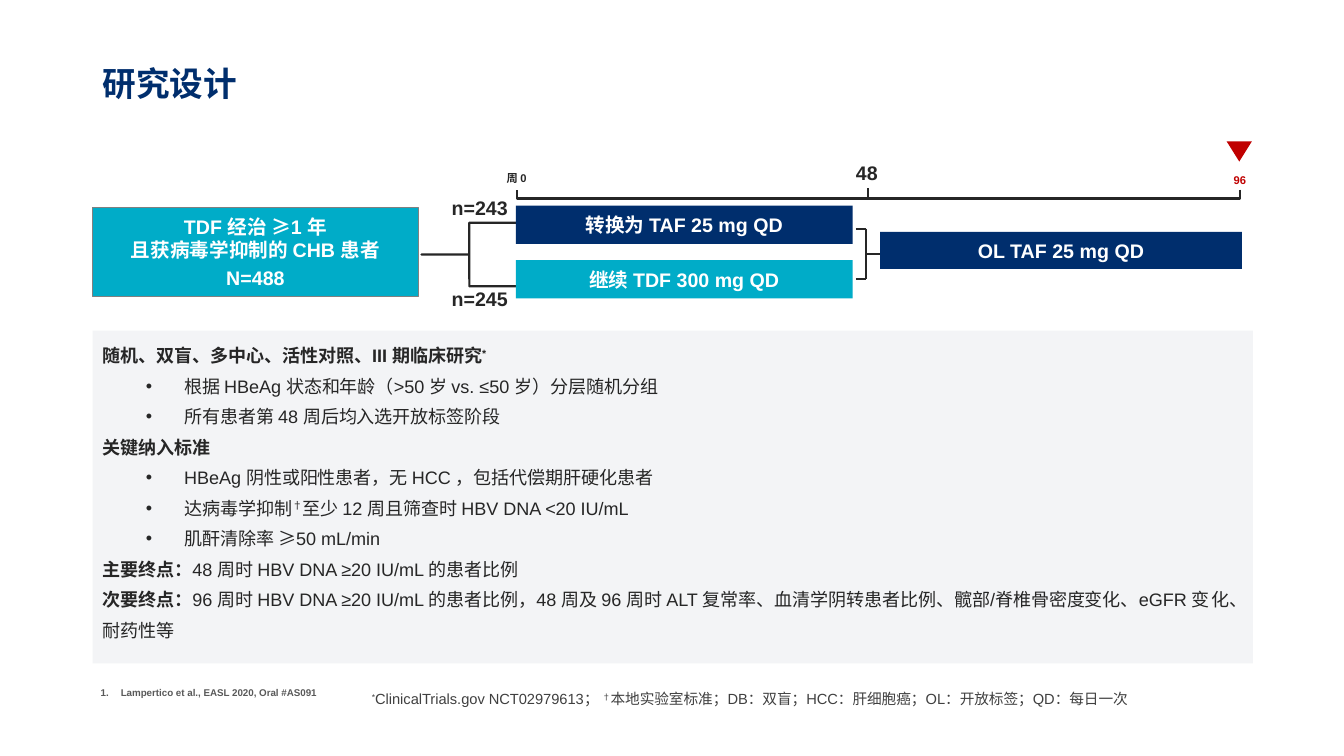
"""Builds the study design slide: treatment timeline, study arms and key criteria."""
from lxml.etree import SubElement
from pptx import Presentation
from pptx.dml.color import RGBColor
from pptx.enum.shapes import MSO_CONNECTOR as CONNECTOR, MSO_SHAPE as SHAPE
from pptx.enum.text import MSO_ANCHOR as ANCHOR, PP_ALIGN as ALIGN
from pptx.oxml.ns import qn
from pptx.util import Pt

COLORS = {"navy": "002E6D", "teal": "00ACC8", "red": "C00000", "ink": "262626", "panel": "203661",
          "white": "FFFFFF", "grey": "808080", "note": "404040", "citation": "595959"}
CJK_FONT = "Noto Sans CJK SC"


def color(name):
    return RGBColor.from_string(COLORS[name])


def add_run(paragraph, text, size, color_name, bold=False, raised=False, font="Arial"):
    run = paragraph.add_run()
    run.text = text
    run.font.size, run.font.bold = Pt(size), bold
    run.font.color.rgb = color(color_name)
    run.font.name = font
    properties = run.font._element
    SubElement(properties, qn("a:ea"), typeface=CJK_FONT)
    if raised:
        properties.set("baseline", "30000")


presentation = Presentation()
presentation.slide_width, presentation.slide_height = Pt(960), Pt(540)
slide = presentation.slides.add_slide(presentation.slide_layouts[6])
shapes = slide.shapes

title = shapes.add_textbox(Pt(66.2), Pt(29.5), Pt(828), Pt(59))
title.text_frame.word_wrap = True
title.text_frame.vertical_anchor = ANCHOR.MIDDLE
add_run(title.text_frame.paragraphs[0], "研究设计", 24, "navy", True, font=CJK_FONT)

labels = [
    ("周 0", 369, 123.2, 8, "ink", ANCHOR.BOTTOM),
    ("48", 619.2, 123.2, 14, "ink", ANCHOR.BOTTOM),
    ("96", 885.6, 124.6, 8, "red", ANCHOR.BOTTOM),
    ("n=243", 342.7, 136.8, 14, "ink", ANCHOR.MIDDLE),
    ("n=245", 342.7, 201.6, 14, "ink", ANCHOR.MIDDLE),
]
for text, center, bottom_box_top, size, color_name, anchor in labels:
    label = shapes.add_textbox(Pt(center - 35), Pt(bottom_box_top - 12.3 if anchor == ANCHOR.BOTTOM
                                                   else bottom_box_top - 0.7), Pt(70), Pt(24.5))
    frame = label.text_frame
    frame.word_wrap = True
    frame.margin_left = frame.margin_right = 0
    frame.vertical_anchor = anchor
    frame.paragraphs[0].alignment = ALIGN.CENTER
    add_run(frame.paragraphs[0], text, size, color_name, True)

builder = shapes.build_freeform(Pt(885.6), Pt(135.4))
builder.add_line_segments([(Pt(885.6), Pt(141.8)), (Pt(369.4), Pt(141.8)), (Pt(369.4), Pt(135.4))],
                          close=False)
timeline = builder.convert_to_shape()
randomization = shapes.add_shape(SHAPE.LEFT_BRACE, Pt(301), Pt(159.1), Pt(68.4), Pt(45.4))
randomization.adjustments[0], randomization.adjustments[1] = 0, 0.5
outlines = [timeline, randomization]
for outline in outlines:
    outline.shadow.inherit = False
    outline.fill.background()

segments = [
    (619.9, 134.6, 619.9, 142.6),
    (611.3, 163.4, 618.8, 163.4),
    (611.3, 199.4, 618.8, 199.4),
    (618.8, 163.4, 618.8, 199.4),
    (618.8, 181.4, 630, 181.4),
]
for segment in segments:
    line = shapes.add_connector(CONNECTOR.STRAIGHT, *map(Pt, segment))
    SubElement(line._element.spPr, qn("a:effectLst"))
    outlines.append(line)
for outline in outlines:
    outline.line.color.rgb = color("ink")
    outline.line.width = Pt(1.5)

boxes = [
    ("teal", 66.2, 148.3, 232.6, 63.4, ["TDF 经治 ≥1 年\v且获病毒学抑制的 CHB 患者", "N=488"]),
    ("navy", 368.6, 146.9, 240.5, 27.4, ["转换为 TAF 25 mg QD"]),
    ("teal", 368.6, 185.8, 240.5, 27.4, ["继续 TDF 300 mg QD"]),
    ("navy", 628.6, 165.6, 258.5, 26.6, ["OL TAF 25 mg QD"]),
]
for fill, left, top, width, height, lines in boxes:
    box = shapes.add_shape(SHAPE.RECTANGLE, Pt(left), Pt(top), Pt(width), Pt(height))
    box.shadow.inherit = False
    box.fill.solid()
    box.fill.fore_color.rgb = color(fill)
    if len(lines) > 1:
        box.line.color.rgb = color("grey")
        box.line.width = Pt(0.75)
    else:
        box.line.fill.background()
    frame = box.text_frame
    frame.word_wrap = True
    frame.vertical_anchor = ANCHOR.MIDDLE
    for index, text in enumerate(lines):
        paragraph = frame.add_paragraph() if index else frame.paragraphs[0]
        paragraph.alignment = ALIGN.CENTER
        paragraph.space_before = Pt(2.8 if index else 0)
        for part_index, part in enumerate(text.split("\v")):
            if part_index:
                paragraph.add_line_break()
            add_run(paragraph, part, 14, "white", True)

marker = shapes.add_shape(SHAPE.ISOSCELES_TRIANGLE, Pt(883.4 - 7.2), Pt(101), Pt(18), Pt(14.4))
marker.rotation = 180
marker.shadow.inherit = False
marker.fill.solid()
marker.fill.fore_color.rgb = color("red")
marker.line.fill.background()

panel = shapes.add_shape(SHAPE.RECTANGLE, Pt(66.2), Pt(236.2), Pt(828.7), Pt(237.6))
panel.shadow.inherit = False
panel.fill.solid()
panel.fill.fore_color.rgb = color("panel")
SubElement(panel._element.spPr.find(qn("a:solidFill"))[0], qn("a:alpha"), val="5000")
panel.line.fill.background()
frame = panel.text_frame
frame.word_wrap = True
frame.vertical_anchor = ANCHOR.TOP
criteria = [
    ("随机、双盲、多中心、活性对照、III 期临床研究", "*", ""),
    ("", "", "根据 HBeAg 状态和年龄（>50 岁 vs. ≤50 岁）分层随机分组"),
    ("", "", "所有患者第 48 周后均入选开放标签阶段"),
    ("关键纳入标准", "", ""),
    ("", "", "HBeAg 阴性或阳性患者，无 HCC ，包括代偿期肝硬化患者"),
    ("", "", "达病毒学抑制†至少 12 周且筛查时 HBV DNA <20 IU/mL"),
    ("", "", "肌酐清除率 ≥50 mL/min"),
    ("主要终点：", "", "48 周时 HBV DNA ≥20 IU/mL 的患者比例"),
    ("次要终点：", "", "96 周时 HBV DNA ≥20 IU/mL 的患者比例，48 周及 96 周时 ALT 复常率、"
     "血清学阴转患者比例、髋部/脊椎骨密度变化、eGFR 变\t化、耐药性等"),
]
for index, (heading, mark, detail) in enumerate(criteria):
    paragraph = frame.add_paragraph() if index else frame.paragraphs[0]
    paragraph.alignment = ALIGN.LEFT
    paragraph.line_spacing = Pt(21.8)
    properties = paragraph._p.get_or_add_pPr()
    if not heading:
        paragraph.level = 1
        properties.set("marL", str(Pt(58.3)))
        properties.set("indent", str(Pt(-27.4)))
        SubElement(SubElement(properties, qn("a:buClr")), qn("a:srgbClr"), val=COLORS["ink"])
        SubElement(properties, qn("a:buFont"), typeface="Arial")
        SubElement(properties, qn("a:buChar"), char="•")
    if "\t" in detail:
        SubElement(SubElement(properties, qn("a:tabLst")), qn("a:tab"), pos=str(Pt(95)), algn="l")
    before, dagger, after = detail.partition("†")
    for text, bold, raised in [(heading, True, False), (mark, True, True), (before, False, False),
                               (dagger, False, True), (after, False, False)]:
        if text:
            add_run(paragraph, text, 12.9, "ink", bold, raised)

citation = shapes.add_textbox(Pt(64.8), Pt(486.7), Pt(200), Pt(37.4))
citation.text_frame.word_wrap = True
paragraph = citation.text_frame.paragraphs[0]
properties = paragraph._p.get_or_add_pPr()
properties.set("marL", str(Pt(14.4)))
properties.set("indent", str(Pt(-14.4)))
SubElement(properties, qn("a:buFont"), typeface="Arial")
SubElement(properties, qn("a:buAutoNum"), type="arabicPeriod")
add_run(paragraph, "Lampertico et al., EASL 2020, Oral #AS091", 7, "citation", True)

footnote = shapes.add_textbox(Pt(258.5), Pt(483.1), Pt(635.8), Pt(25.2))
footnote.text_frame.word_wrap = True
paragraph = footnote.text_frame.paragraphs[0]
paragraph.line_spacing = 1.5
for text, raised in [("*", True), ("ClinicalTrials.gov NCT02979613； ", False), ("†", True),
                     ("本地实验室标准；DB：双盲；HCC：肝细胞癌；OL：开放标签；QD：每日一次", False)]:
    add_run(paragraph, text, 10.5, "note", raised=raised)

presentation.save("out.pptx")
